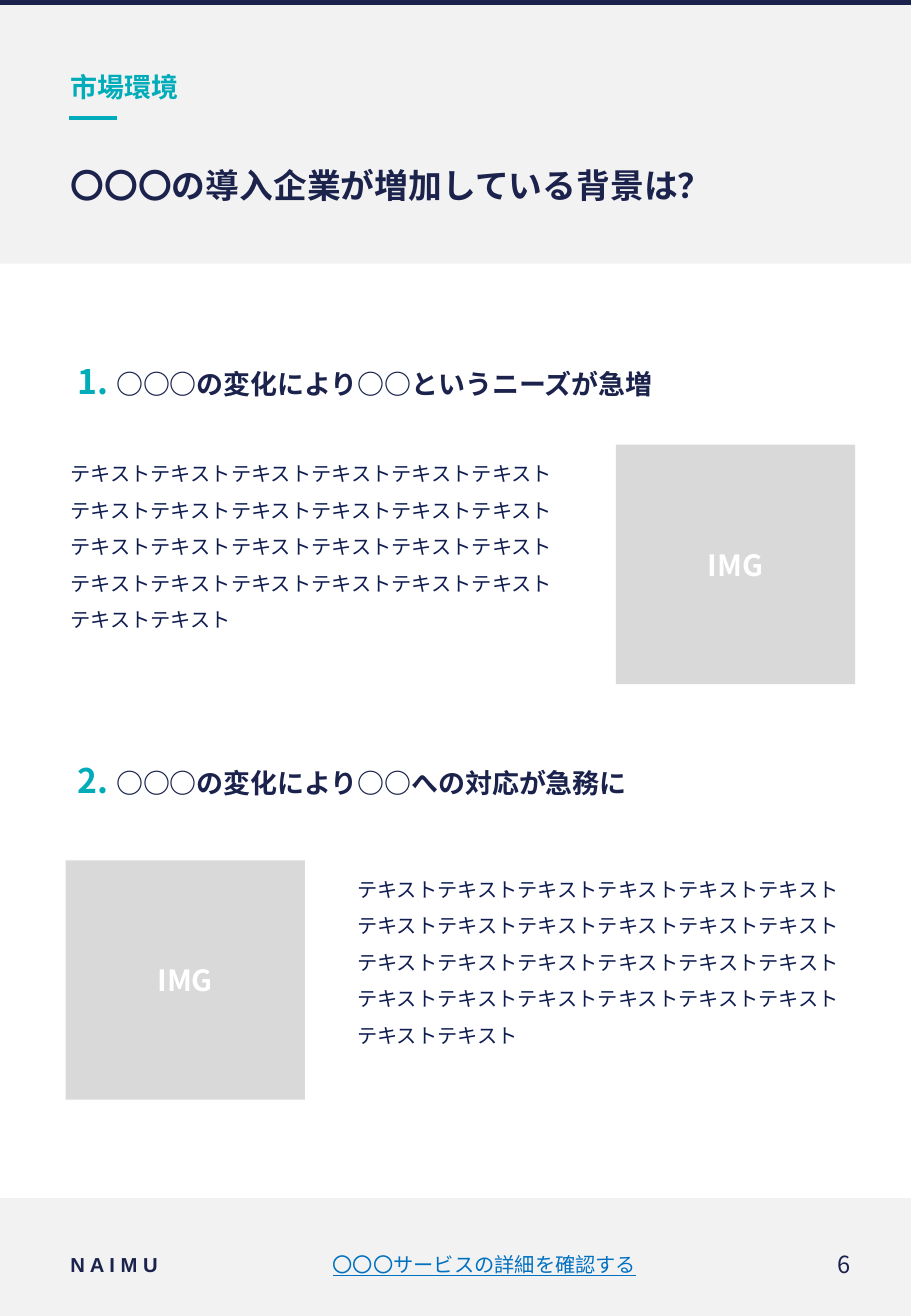
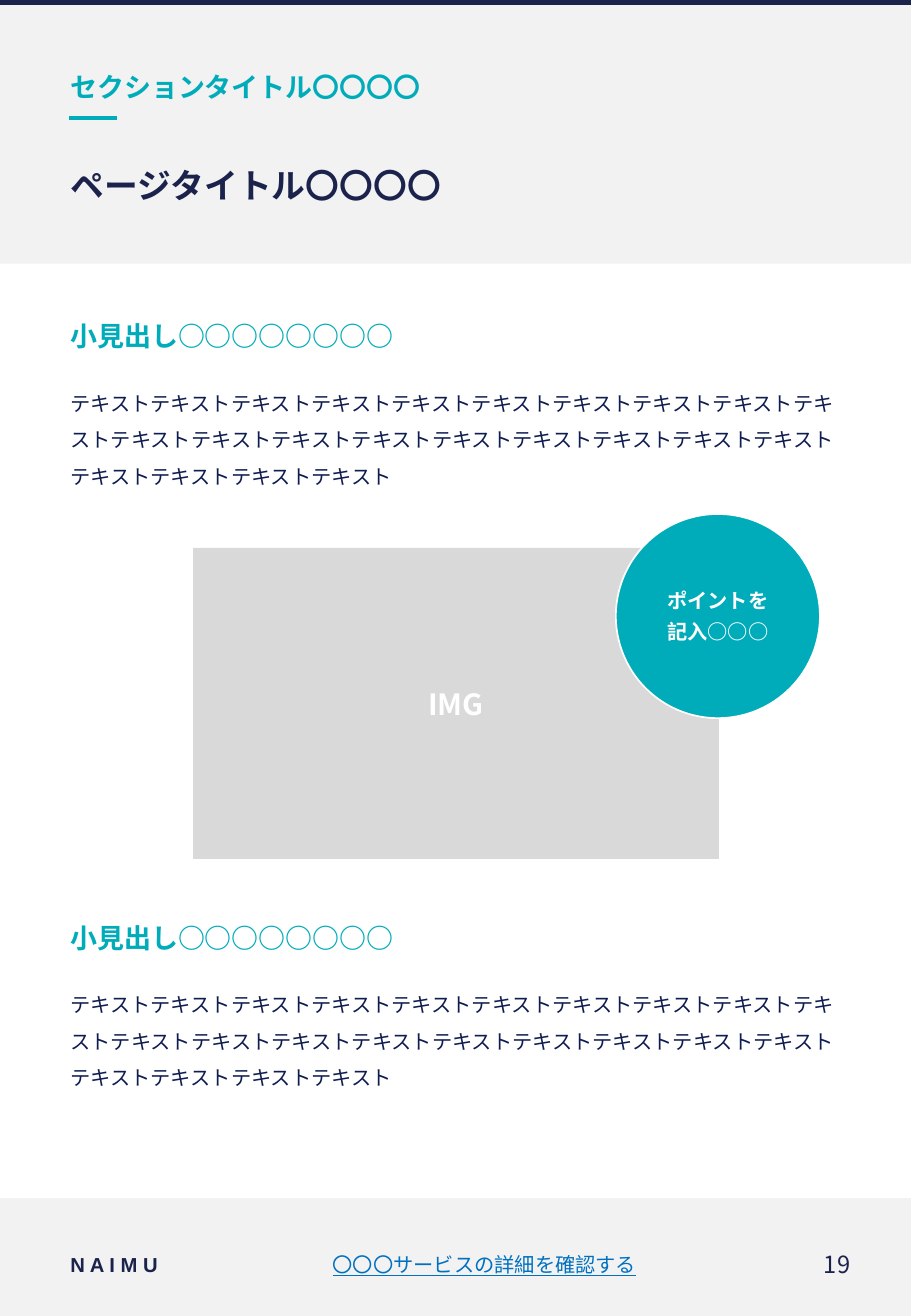
import pptx
import pptx.util
import pptx.dml.color
import pptx.enum.shapes
import pptx.enum.text
import pptx.oxml
import pptx.oxml.ns

RGB = pptx.dml.color.RGBColor
Pt = pptx.util.Pt
SHAPE = pptx.enum.shapes.MSO_SHAPE
ALIGN = pptx.enum.text.PP_ALIGN
ANCHOR = pptx.enum.text.MSO_ANCHOR

NAVY = RGB(0x1B, 0x22, 0x4C)
INK = RGB(0x0F, 0x1C, 0x50)
TEAL = RGB(0x00, 0xAC, 0xBA)
BLUE = RGB(0x00, 0x70, 0xC0)
PALE = RGB(0xF2, 0xF2, 0xF2)
GREY = RGB(0xD9, 0xD9, 0xD9)
WHITE = RGB(0xFF, 0xFF, 0xFF)

LATIN, KANJI = "Arial", "Noto Sans CJK JP"
WIDE, HIGH = 7.5, 10.83
LEFT, SPAN = 0.54, 6.49
ROW = 0.39
IMAGE = 1.97
COPY = 4.13
DUMMY = "テキスト"


def inches(*sizes):
    return [pptx.util.Inches(size) for size in sizes]


def write(frame, lines, size=12, color=NAVY, font=LATIN, bold=False,
          under=False, align=ALIGN.LEFT, anchor=ANCHOR.MIDDLE,
          inset=0.04, pitch=None, after=0):
    """Fill a frame; each line is a list of (text, own format) runs or a string."""
    frame.word_wrap = True
    frame.vertical_anchor = anchor
    frame.margin_left = frame.margin_right = pptx.util.Inches(inset)
    frame.margin_top = frame.margin_bottom = pptx.util.Inches(0.04)
    for index, line in enumerate(lines):
        para = frame.add_paragraph() if index else frame.paragraphs[0]
        para.alignment = align
        para.space_after = Pt(after)
        if pitch:
            para.line_spacing = Pt(pitch)
        for text, own in [(line, {})] if isinstance(line, str) else line:
            run = para.add_run()
            run.text = text
            run.font.name = font
            run.font.size = Pt(own.get("size", size))
            run.font.bold = bold
            run.font.underline = under
            run.font.color.rgb = own.get("color", color)
            asian = pptx.oxml.parse_xml(
                f'<a:ea {pptx.oxml.ns.nsdecls("a")} typeface="{KANJI}"/>')
            run.font._element.find(pptx.oxml.ns.qn("a:latin")).addnext(asian)


def label(slide, box, *lines, **style):
    write(slide.shapes.add_textbox(*inches(*box)).text_frame, lines, **style)


def block(slide, box, fill, kind=SHAPE.RECTANGLE, line=None):
    shape = slide.shapes.add_shape(kind, *inches(*box))
    shape.shadow.inherit = False
    shape.fill.solid()
    shape.fill.fore_color.rgb = fill
    if line is None:
        shape.line.fill.background()
    else:
        shape.line.color.rgb = line
        shape.line.width = Pt(1)
    return shape


def image(slide, box):
    write(block(slide, box, GREY).text_frame, ["IMG"], size=17.3,
          color=WHITE, font=KANJI, bold=True, align=ALIGN.CENTER)


def copy(slide, box, count):
    label(slide, box, DUMMY * count, color=INK, anchor=ANCHOR.TOP,
          pitch=21.6, after=4.3)


def header(slide, box, section, title):
    x, y, wide, high = box
    block(slide, box, PALE)
    rule = slide.shapes.add_connector(
        pptx.enum.shapes.MSO_CONNECTOR.STRAIGHT,
        *inches(x + 0.57, y + 0.97, x + 0.96, y + 0.97))
    rule.line.color.rgb = TEAL
    rule.line.width = Pt(2.5)
    rule._element.spPr.append(pptx.oxml.parse_xml(
        f'<a:effectLst {pptx.oxml.ns.nsdecls("a")}/>'))
    block(slide, (x, y, wide, 0.04), NAVY)
    label(slide, (x + LEFT, y + 0.52, SPAN, ROW), section,
          size=16, color=TEAL, bold=True)
    label(slide, (x + LEFT, y + 1.13, SPAN, 0.79), title, size=20, bold=True)


def footer(slide, box, page):
    x, y, wide, high = box
    block(slide, box, PALE)
    top, tall = y + ROW, 0.31
    label(slide, (x + LEFT, top, 1.58, tall), "N A I M U", bold=True)
    label(slide, (x + 2.12, top, 3.74, tall), "〇〇〇サービスの詳細を確認する",
          color=BLUE, under=True, align=ALIGN.CENTER)
    label(slide, (x + 5.86, top, 1.18, tall), str(page), size=14,
          font=KANJI, align=ALIGN.RIGHT)


def page(deck, section, title, number):
    slide = deck.slides.add_slide(deck.slide_layouts[6])
    header(slide, (0, 0, WIDE, 2.17), section, title)
    footer(slide, (0, 9.86, WIDE, HIGH - 9.86), number)
    return slide


def reason(slide, box, number, text, gap, flip=False):
    """Numbered heading over copy and image; flip puts the image first."""
    x, y, wide, high = box
    label(slide, (x, y, wide, ROW),
          [(f"{number}. ", {"size": 20, "color": TEAL}), (text, {})],
          size=16, font=KANJI, bold=True, inset=0.1)
    top = y + gap
    image(slide, (x if flip else x + wide - IMAGE + 0.01, top, IMAGE, IMAGE))
    copy(slide, (x + wide - COPY if flip else x, top, COPY, IMAGE), 26)


def passage(slide, box):
    x, y, wide, high = box
    label(slide, (x, y, wide, ROW), "小見出し○○○○○○○○",
          size=16, color=TEAL, bold=True)
    copy(slide, (x, y + 0.51, wide, high - 0.51), 23)


def figure(slide, box):
    """Image with a round badge over its upper right corner."""
    x, y, wide, high = box
    image(slide, box)
    round_box = (x + wide - 0.85, y - 0.28, 1.68, 1.68)
    badge = block(slide, round_box, TEAL, SHAPE.OVAL, WHITE)
    write(badge.text_frame, ["ポイントを", "記入○○○"], color=WHITE, font=KANJI,
          bold=True, align=ALIGN.CENTER, pitch=14.4, after=4)


def main():
    deck = pptx.Presentation()
    deck.slide_width, deck.slide_height = inches(WIDE, HIGH)

    market = page(deck, "市場環境", "〇〇〇の導入企業が増加している背景は？", 6)
    reason(market, (LEFT, 2.94, SPAN, 2.69), 1,
           "○○○の変化により○○というニーズが急増", 0.72)
    reason(market, (LEFT, 6.22, SPAN, 2.83), 2,
           "○○○の変化により○○への対応が急務に", 0.86, flip=True)

    topic = page(deck, "セクションタイトル〇〇〇〇", "ページタイトル〇〇〇〇", 19)
    for top in (2.57, 7.52):
        passage(topic, (LEFT, top, SPAN, 1.49))
    figure(topic, (1.59, 4.51, 4.33, 2.56))

    deck.save("out.pptx")


if __name__ == "__main__":
    main()
